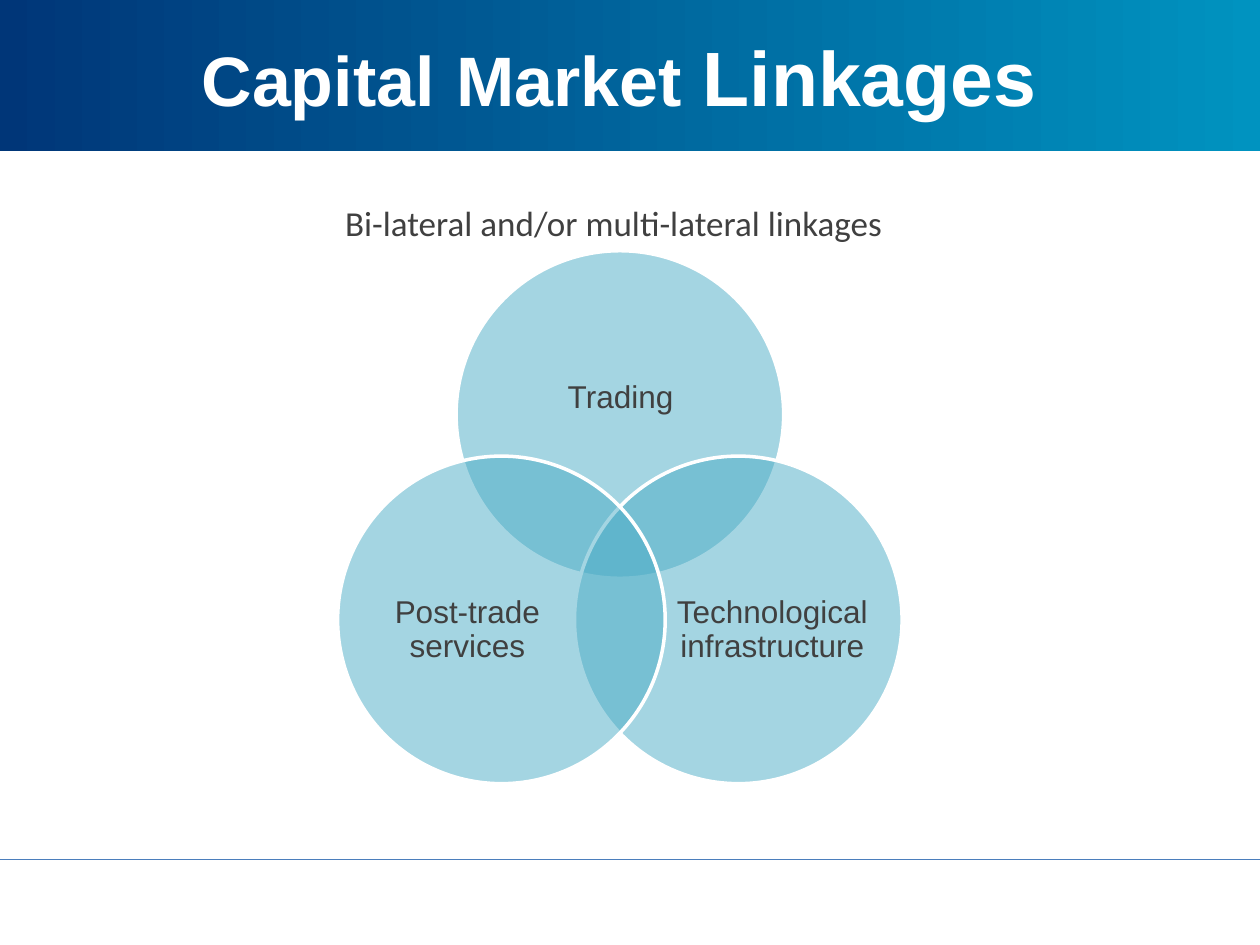
from dataclasses import dataclass

from lxml import etree
from pptx import Presentation
from pptx.dml.color import RGBColor
from pptx.enum import shapes, text
from pptx.oxml import ns
from pptx.util import Inches, Pt


@dataclass(frozen=True)
class Theme:
    navy: RGBColor = RGBColor(0x00, 0x36, 0x78)
    cyan: RGBColor = RGBColor(0x00, 0x93, 0xC0)
    circle: RGBColor = RGBColor(0x4B, 0xAC, 0xC6)
    rule: RGBColor = RGBColor(0x4B, 0x7E, 0xBC)
    white: RGBColor = RGBColor(0xFF, 0xFF, 0xFF)
    ink: RGBColor = RGBColor(0x40, 0x40, 0x40)
    heading_font: str = "Arial"
    caption_font: str = "Calibri"
    title_size: Pt = Pt(40)
    title_large_size: Pt = Pt(44)
    caption_size: Pt = Pt(20)
    label_size: Pt = Pt(18)


THEME = Theme()
CIRCLE_DIAMETER = 2.6

# Circle left and top, then label box, for each part of the Venn diagram
VENN = [
    ("Trading", (3.62, 1.99), (3.97, 2.58, 1.91, 1.17)),
    ("Technological infrastructure", (4.56, 3.62), (5.35, 4.29, 1.56, 1.43)),
    ("Post-trade services", (2.68, 3.62), (2.93, 4.29, 1.56, 1.43)),
]


def inches(*lengths):
    return [Inches(length) for length in lengths]


def style_font(font, name, size, color):
    font.name = name
    font.size = size
    font.color.rgb = color


def add_rule(slide, y):
    rule = slide.shapes.add_connector(
        shapes.MSO_CONNECTOR.STRAIGHT, *inches(0, y, 10, y))
    rule.line.color.rgb = THEME.rule
    rule.line.width = Pt(0.75)
    etree.SubElement(rule.element.spPr, ns.qn("a:effectLst"))


def add_title_band(slide):
    """Add the gradient band and place it behind the title."""
    band = slide.shapes.add_shape(
        shapes.MSO_SHAPE.RECTANGLE, *inches(0, -0.01, 10, 1.21))
    band.shadow.inherit = False
    band.line.fill.background()
    band.fill.gradient()
    band.fill.gradient_angle = 0
    for stop, color in zip(band.fill.gradient_stops, (THEME.navy, THEME.cyan)):
        stop.color.rgb = color
    slide.shapes.title.element.addprevious(band.element)


def set_title(slide, pieces):
    title = slide.shapes.title
    title.left, title.top, title.width, title.height = inches(0.5, 0, 9, 1.2)
    title.text_frame.vertical_anchor = text.MSO_ANCHOR.MIDDLE
    heading = title.text_frame.paragraphs[0]
    heading.alignment = text.PP_ALIGN.CENTER
    for words, size in pieces:
        run = heading.add_run()
        run.text = words
        style_font(run.font, THEME.heading_font, size, THEME.white)
        run.font.bold = True


def add_caption(slide, words):
    frame = slide.shapes.add_textbox(*inches(2.64, 1.55, 4.82, 0.44)).text_frame
    frame.word_wrap = False
    frame.auto_size = text.MSO_AUTO_SIZE.SHAPE_TO_FIT_TEXT
    caption = frame.paragraphs[0]
    caption.text = words
    style_font(caption.font, THEME.caption_font, THEME.caption_size, THEME.ink)


def add_circle(group, corner):
    circle = group.shapes.add_shape(
        shapes.MSO_SHAPE.OVAL,
        *inches(*corner, CIRCLE_DIAMETER, CIRCLE_DIAMETER))
    circle.shadow.inherit = False
    circle.fill.solid()
    circle.fill.fore_color.rgb = THEME.circle
    color = circle.element.spPr.find(ns.qn("a:solidFill"))[0]
    etree.SubElement(color, ns.qn("a:alpha"), val="50000")
    circle.line.color.rgb = THEME.white
    circle.line.width = Pt(2)


def add_label(group, words, box):
    frame = group.shapes.add_textbox(*inches(*box)).text_frame
    frame.word_wrap = True
    frame.vertical_anchor = text.MSO_ANCHOR.MIDDLE
    frame.margin_left = frame.margin_right = 0
    frame.margin_top = frame.margin_bottom = 0
    label = frame.paragraphs[0]
    label.text = words
    label.alignment = text.PP_ALIGN.CENTER
    label.line_spacing = 0.9
    style_font(label.font, THEME.heading_font, THEME.label_size, THEME.ink)


def add_venn(slide):
    group = slide.shapes.add_group_shape()
    for words, corner, label_box in VENN:
        add_circle(group, corner)
        add_label(group, words, label_box)


def main():
    deck = Presentation()
    deck.slide_width, deck.slide_height = inches(10, 7.5)
    slide = deck.slides.add_slide(deck.slide_layouts.get_by_name("Title Only"))
    add_rule(slide, 6.82)
    add_title_band(slide)
    set_title(slide, [
        ("Capital", THEME.title_size),
        (" ", THEME.title_large_size),
        ("Market", THEME.title_size),
        (" Linkages ", THEME.title_large_size),
    ])
    add_caption(slide, "Bi-lateral and/or multi-lateral linkages")
    add_venn(slide)
    deck.save("out.pptx")


if __name__ == "__main__":
    main()
